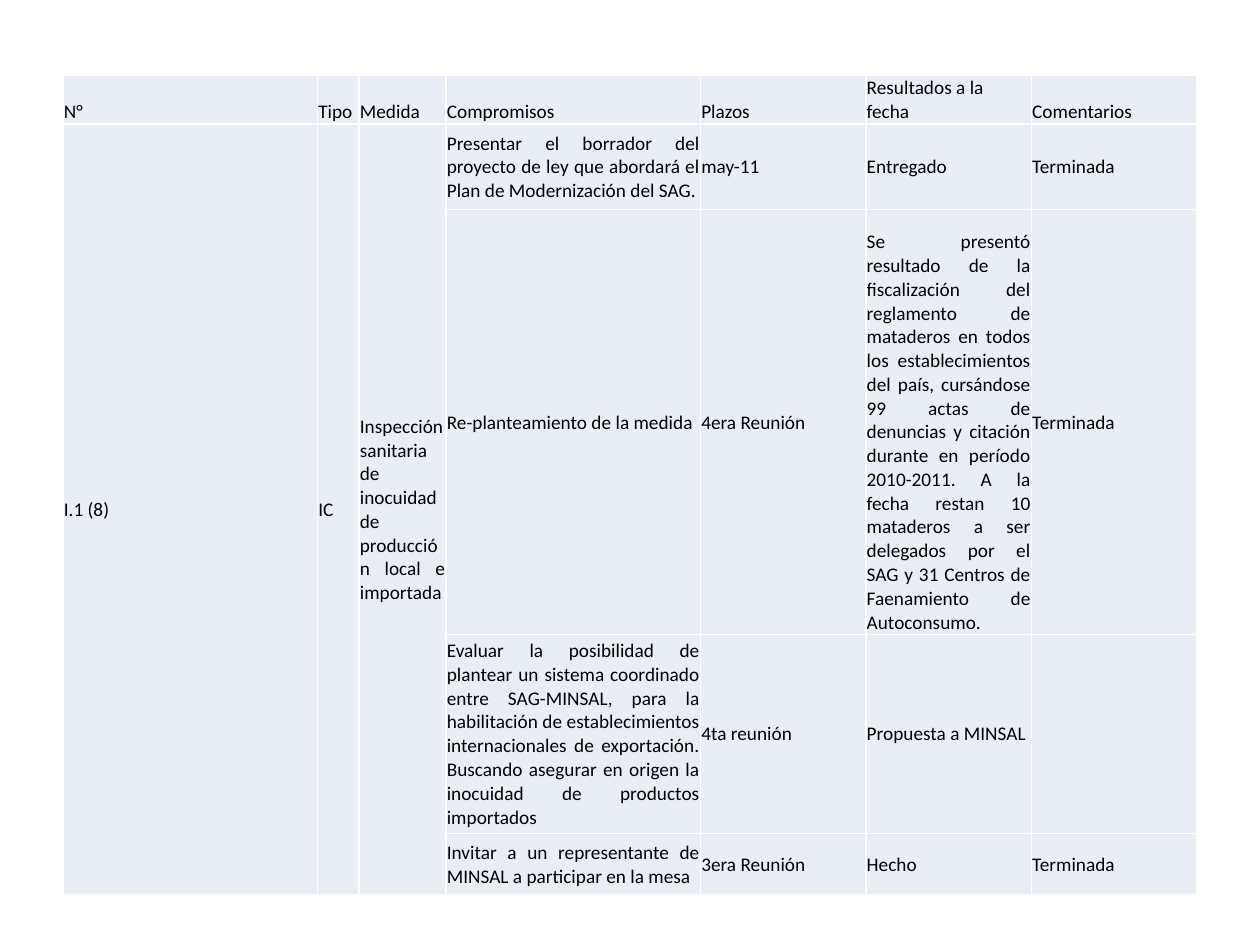
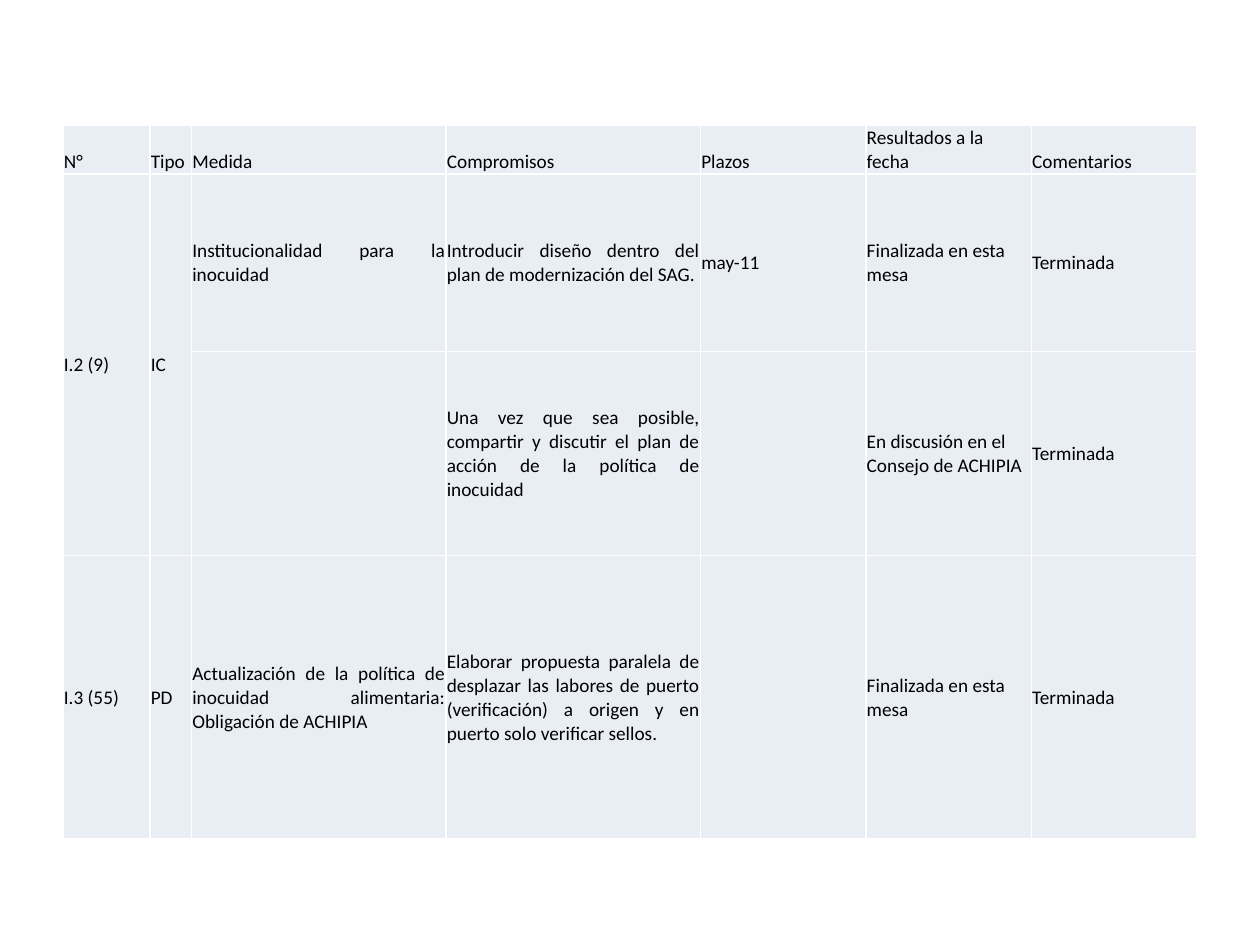
from dataclasses import dataclass

from lxml import etree
from pptx import Presentation
from pptx import util as u
from pptx.dml.color import RGBColor
from pptx.enum import text
from pptx.oxml.ns import qn


@dataclass(frozen=True)
class Theme:
    font: str = "Calibri"
    size: int = 11
    ink: str = "000000"
    cell_fill: str = "E9EDF4"
    border: str = "FFFFFF"
    border_width: int = 1
    margin: float = 0.5  # points


THEME = Theme()
TABLE_LEFT, TABLE_WIDTH = 0.5, 9
BLANK_LAYOUT = 6
HEADER = ["N°", "Tipo", "Medida", "Compromisos", "Plazos",
          "Resultados a la fecha", "Comentarios"]
RESULT_COLUMN = HEADER.index("Resultados a la fecha")
LONG_RESULT = 100  # characters from which a result is justified
NARROW, TYPE, WIDE = 0.69, 0.33, 2.02
STATUS = (TABLE_WIDTH - NARROW - TYPE - 2 * WIDE) / 3
SHARED_WIDTHS = [WIDE] + [STATUS] * 3

# None continues the cell above; "" is an empty cell.
INSPECTION_ROWS = [
    ["I.1 (8)", "IC",
     "Inspección sanitaria de inocuidad de producción local e importada",
     "Presentar el borrador del proyecto de ley que abordará el Plan de "
     "Modernización del SAG.",
     "may-11", "Entregado", "Terminada"],
    [None, None, None, "Re-planteamiento de la medida", "4era Reunión",
     "Se presentó resultado de la fiscalización del reglamento de mataderos "
     "en todos los establecimientos del país, cursándose 99 actas de "
     "denuncias y citación durante en período 2010-2011. A la fecha restan "
     "10 mataderos a ser delegados por el SAG y 31 Centros de Faenamiento "
     "de Autoconsumo.",
     "Terminada"],
    [None, None, None,
     "Evaluar la posibilidad de plantear un sistema coordinado entre "
     "SAG-MINSAL, para la habilitación de establecimientos internacionales "
     "de exportación. Buscando asegurar en origen la inocuidad de productos "
     "importados",
     "4ta reunión", "Propuesta a MINSAL", ""],
    [None, None, None,
     "Invitar a un representante de MINSAL a participar en la mesa",
     "3era Reunión", "Hecho", "Terminada"],
]

POLICY_ROWS = [
    ["I.2 (9)", "IC", "Institucionalidad para la inocuidad",
     "Introducir diseño dentro del plan de modernización del SAG.",
     "may-11", "Finalizada en esta mesa", "Terminada"],
    [None, None, "",
     "Una vez que sea posible, compartir y discutir el plan de acción de la "
     "política de inocuidad",
     "", "En discusión en el Consejo de ACHIPIA", "Terminada"],
    ["I.3 (55)", "PD",
     "Actualización de la política de inocuidad alimentaria: Obligación de "
     "ACHIPIA",
     "Elaborar propuesta paralela de desplazar las labores de puerto "
     "(verificación) a origen y en puerto solo verificar sellos.",
     "", "Finalizada en esta mesa", "Terminada"],
]


def add_borders(cell):
    properties = cell._tc.get_or_add_tcPr()
    for position, side in enumerate(("lnL", "lnR", "lnT", "lnB")):
        line = etree.Element(qn(f"a:{side}"), w=str(u.Pt(THEME.border_width)))
        fill = etree.SubElement(line, qn("a:solidFill"))
        etree.SubElement(fill, qn("a:srgbClr"), val=THEME.border)
        properties.insert(position, line)


def style_cell(cell):
    cell.fill.solid()
    cell.fill.fore_color.rgb = RGBColor.from_string(THEME.cell_fill)
    cell.margin_left = cell.margin_right = cell.margin_top = u.Pt(THEME.margin)
    cell.margin_bottom = 0
    add_borders(cell)


def write_cell(cell, content, anchor, alignment):
    cell.text_frame.text = content
    cell.vertical_anchor = anchor
    paragraph = cell.text_frame.paragraphs[0]
    paragraph.alignment = alignment
    paragraph.font.size = u.Pt(THEME.size)
    for run in paragraph.runs:
        run.font.size = u.Pt(THEME.size)
        run.font.name = THEME.font
        run.font.color.rgb = RGBColor.from_string(THEME.ink)


def cell_layout(row, column, content):
    """Return the anchor and alignment that suit a cell's place and length."""
    anchors, alignments = text.MSO_ANCHOR, text.PP_ALIGN
    if row == 0:
        return anchors.BOTTOM, alignments.LEFT
    if column < RESULT_COLUMN:
        return anchors.MIDDLE, alignments.JUSTIFY
    if len(content) > LONG_RESULT:
        return anchors.BOTTOM, alignments.JUSTIFY
    return anchors.MIDDLE, alignments.LEFT


def merge_continued_cells(table, rows):
    for column in range(len(HEADER)):
        start = 0
        for row, contents in enumerate(rows):
            if contents[column] is not None:
                start = row
            elif row + 1 == len(rows) or rows[row + 1][column] is not None:
                table.cell(start, column).merge(table.cell(row, column))


def add_commitments_table(slide, top, widths, heights, body):
    rows = [HEADER] + body
    frame = slide.shapes.add_table(
        len(rows), len(HEADER), u.Inches(TABLE_LEFT), u.Inches(top),
        u.Inches(TABLE_WIDTH), u.Inches(sum(heights)))
    table = frame.table
    table.first_row = table.horz_banding = False
    for column, width in zip(table.columns, widths):
        column.width = u.Inches(width)
    for row, height in zip(table.rows, heights):
        row.height = u.Inches(height)
    for row, contents in enumerate(rows):
        for column, content in enumerate(contents):
            cell = table.cell(row, column)
            style_cell(cell)
            if content is not None:
                write_cell(cell, content, *cell_layout(row, column, content))
    merge_continued_cells(table, rows)


def main():
    presentation = Presentation()
    presentation.slide_width = u.Inches(10)
    presentation.slide_height = u.Inches(7.5)
    tables = [
        (0.6, [WIDE, TYPE, NARROW], [0.25, 0.68, 3.37, 1.58, 0.49],
         INSPECTION_ROWS),
        (0.99, [NARROW, TYPE, WIDE], [0.39, 1.41, 1.62, 2.25], POLICY_ROWS),
    ]
    for top, first_widths, heights, body in tables:
        slide = presentation.slides.add_slide(
            presentation.slide_layouts[BLANK_LAYOUT])
        add_commitments_table(slide, top, first_widths + SHARED_WIDTHS,
                              heights, body)
    presentation.save("out.pptx")


if __name__ == "__main__":
    main()
